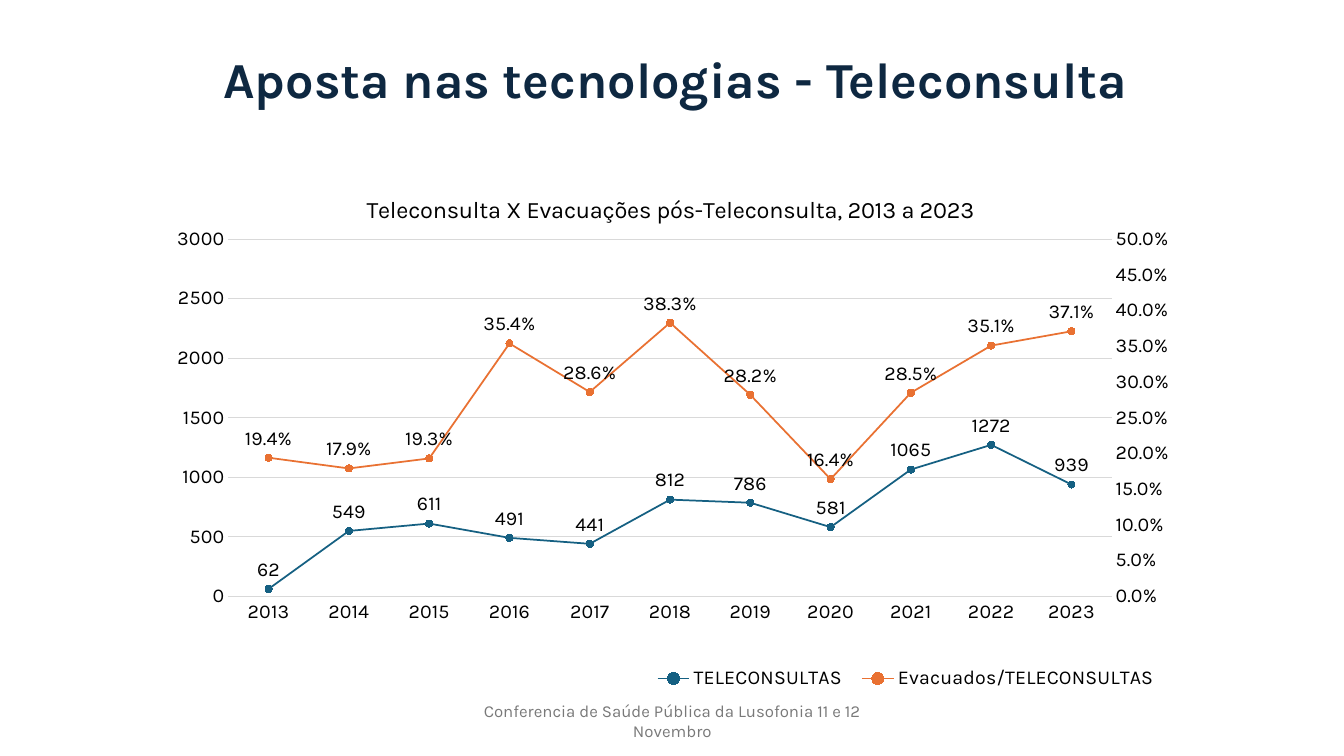
from copy import deepcopy

from lxml import etree
from pptx import Presentation
from pptx.chart.data import CategoryChartData
from pptx.dml.color import RGBColor
from pptx.enum.chart import XL_CHART_TYPE as ChartType, XL_LABEL_POSITION as LabelPos
from pptx.enum.chart import XL_LEGEND_POSITION as LegendPos, XL_MARKER_STYLE as Marker
from pptx.enum.chart import XL_TICK_MARK as TickMark
from pptx.enum.text import MSO_ANCHOR as Anchor, PP_ALIGN as Align
from pptx.oxml.ns import qn
from pptx.util import Pt

# Content
HEADING = "Aposta nas tecnologias - Teleconsulta"
FOOTER = "Conferencia de Saúde Pública da Lusofonia 11 e 12 Novembro"
CHART_TITLE = "Teleconsulta X Evacuações pós-Teleconsulta, 2013 a 2023"
YEARS = [str(year) for year in range(2013, 2024)]
CONSULTATIONS = [62, 549, 611, 491, 441, 812, 786, 581, 1065, 1272, 939]
EVACUATED = [0.194, 0.179, 0.193, 0.354, 0.286, 0.383,
             0.282, 0.164, 0.285, 0.351, 0.371]

# Style
FONT = "Karla"
NAVY = RGBColor(0x0E, 0x28, 0x41)
GRAY = RGBColor(0x79, 0x79, 0x79)
GRID = RGBColor(0xD9, 0xD9, 0xD9)
BLACK = RGBColor(0, 0, 0)
BLUE = RGBColor(0x15, 0x60, 0x82)
ORANGE = RGBColor(0xE9, 0x71, 0x32)
SERIES = [
    ("TELECONSULTAS", CONSULTATIONS, "General", BLUE),
    ("Evacuados/TELECONSULTAS", EVACUATED, "0.0%", ORANGE),
]

# Left, top, width, height in points
HEADING_BOX = (68.4, 6.5, 828, 104.4)
CHART_BOX = (109.44, 120.96, 746.64, 380.88)
FOOTER_BOX = (318.24, 500.4, 324, 28.8)


def style_font(font, size, color, bold=False):
    font.name, font.size, font.bold = FONT, Pt(size), bold
    font.color.rgb = color


def add_text(slide, box, text, size, color, bold=False, spacing=1.0):
    frame = slide.shapes.add_textbox(*map(Pt, box)).text_frame
    frame.word_wrap = True
    frame.vertical_anchor = Anchor.MIDDLE
    paragraph = frame.paragraphs[0]
    paragraph.text = text
    paragraph.alignment = Align.CENTER
    paragraph.line_spacing = spacing
    style_font(paragraph.runs[0].font, size, color, bold)


def set_layout(parent, index, **settings):
    """Place a chart part by fractions of the chart area."""
    for old in parent.findall(qn("c:layout")):
        parent.remove(old)
    layout = etree.Element(qn("c:layout"))
    manual = etree.SubElement(layout, qn("c:manualLayout"))
    for tag, value in settings.items():
        etree.SubElement(manual, qn("c:" + tag)).set("val", str(value))
    parent.insert(index, layout)


def style_axis(axis):
    axis.major_tick_mark = axis.minor_tick_mark = TickMark.NONE
    style_font(axis.tick_labels.font, 14, BLACK)


def add_right_axis(plot_area):
    """Move the second series to its own line group with a percentage axis."""
    left_group = plot_area.find(qn("c:lineChart"))
    right_group = deepcopy(left_group)
    left_group.remove(left_group.findall(qn("c:ser"))[1])
    right_group.remove(right_group.find(qn("c:ser")))
    left_group.addnext(right_group)

    categories = deepcopy(plot_area.find(qn("c:catAx")))
    percent = deepcopy(plot_area.find(qn("c:valAx")))
    plot_area.find(qn("c:valAx")).addnext(categories)
    categories.addnext(percent)

    ids = ("5001", "5002")
    for ref, new_id in zip(right_group.findall(qn("c:axId")), ids):
        ref.set("val", new_id)
    for axis, own, other in ((categories, *ids), (percent, *ids[::-1])):
        axis.find(qn("c:axId")).set("val", own)
        axis.find(qn("c:crossAx")).set("val", other)

    categories.find(qn("c:delete")).set("val", "1")
    percent.remove(percent.find(qn("c:majorGridlines")))
    percent.find(qn("c:axPos")).set("val", "r")
    percent.find(qn("c:crosses")).set("val", "max")
    percent.find(qn("c:numFmt")).set("formatCode", "0.0%")
    percent.find(qn("c:majorUnit")).set("val", "0.05")
    percent.find(qn("c:scaling")).find(qn("c:max")).set("val", "0.5")


def add_line_chart(slide):
    data = CategoryChartData()
    data.categories = YEARS
    for name, values, number_format, _ in SERIES:
        data.add_series(name, values, number_format)
    chart = slide.shapes.add_chart(
        ChartType.LINE_MARKERS, *map(Pt, CHART_BOX), data).chart
    style_font(chart.font, 14, BLACK)

    # Title and legend
    title = chart.chart_title
    title.text_frame.text = CHART_TITLE
    style_font(title.text_frame.paragraphs[0].runs[0].font, 16.8, BLACK)
    set_layout(title._element, 1, xMode="edge", yMode="edge", x=0.2, y=0.04)
    chart.has_legend = True
    legend = chart.legend
    legend.position = LegendPos.BOTTOM
    legend.include_in_layout = False
    style_font(legend.font, 14, BLACK)
    set_layout(legend._element, 1, xMode="edge", yMode="edge",
               x=0.47, y=0.92, w=0.5, h=0.07)

    # Axes
    years, counts = chart.category_axis, chart.value_axis
    style_axis(years)
    style_axis(counts)
    years.format.line.color.rgb = GRID
    years.format.line.width = Pt(0.75)
    counts.format.line.fill.background()
    counts.minimum_scale, counts.maximum_scale, counts.major_unit = 0, 3000, 500
    counts.tick_labels.number_format = "General"
    counts.tick_labels.number_format_is_linked = False
    counts.has_major_gridlines = True
    counts.major_gridlines.format.line.color.rgb = GRID
    counts.major_gridlines.format.line.width = Pt(0.75)

    # Series
    plot = chart.plots[0]
    plot.vary_by_categories = False
    for series, (_, _, number_format, color) in zip(plot.series, SERIES):
        series.smooth = False
        series.format.line.color.rgb = color
        series.format.line.width = Pt(1.25)
        series.marker.style, series.marker.size = Marker.CIRCLE, 5
        series.marker.format.fill.solid()
        series.marker.format.fill.fore_color.rgb = color
        series.marker.format.line.color.rgb = color
        labels = series.data_labels
        labels.show_value = True
        labels.position = LabelPos.ABOVE
        labels.number_format = number_format
        labels.number_format_is_linked = False
        style_font(labels.font, 14, BLACK)

    plot_area = chart._chartSpace.xpath(".//c:plotArea")[0]
    add_right_axis(plot_area)
    set_layout(plot_area, 0, layoutTarget="inner", xMode="edge", yMode="edge",
               x=0.072, y=0.131, w=0.845, h=0.67)


def main():
    deck = Presentation()
    deck.slide_width, deck.slide_height = Pt(960), Pt(540)
    slide = deck.slides.add_slide(deck.slide_layouts[6])
    add_text(slide, HEADING_BOX, HEADING, 36, NAVY, bold=True, spacing=0.9)
    add_line_chart(slide)
    add_text(slide, FOOTER_BOX, FOOTER, 12, GRAY)
    deck.save("out.pptx")


if __name__ == "__main__":
    main()
